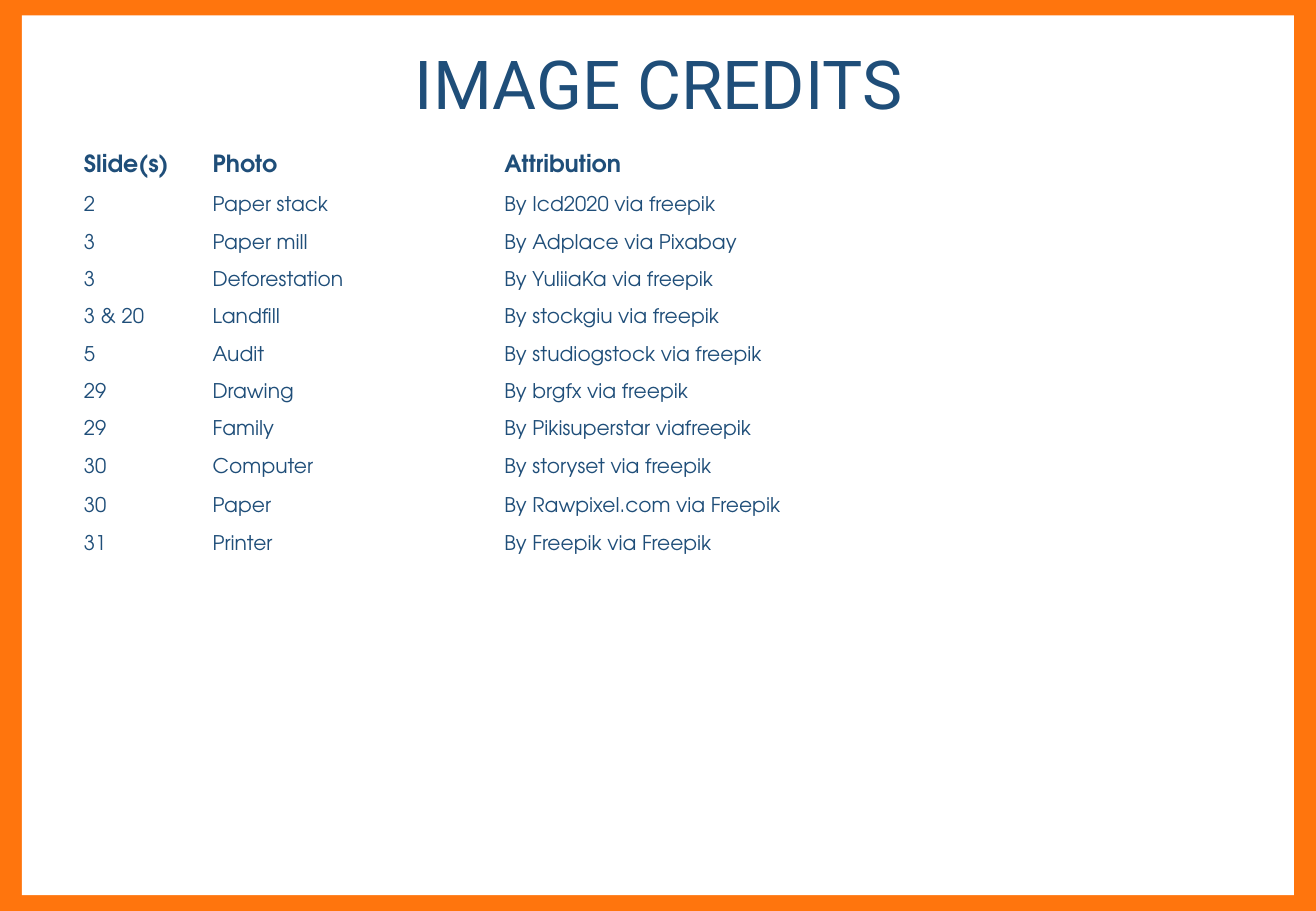
import pptx
import pptx.util
import pptx.dml.color
import pptx.enum.shapes
import pptx.enum.text

Cm = pptx.util.Cm
COLORS = {"border": "FF750D", "page": "FFFFFF", "ink": "1F4E79"}


def write(frame, text, font="TeX Gyre Adventor", size=12, bold=False, align=pptx.enum.text.PP_ALIGN.LEFT):
    paragraph = frame.paragraphs[0]
    paragraph.alignment = align
    run = paragraph.add_run()
    run.text = text
    run.font.name = font
    run.font.size = pptx.util.Pt(size)
    run.font.bold = bold
    run.font.color.rgb = pptx.dml.color.RGBColor.from_string(COLORS["ink"])


deck = pptx.Presentation()
deck.slide_width, deck.slide_height = Cm(27.51), Cm(19.05)
slide = deck.slides.add_slide(deck.slide_layouts[5])
slide.background.fill.solid()
slide.background.fill.fore_color.rgb = pptx.dml.color.RGBColor.from_string(COLORS["border"])

page = slide.shapes.add_shape(
    pptx.enum.shapes.MSO_SHAPE.RECTANGLE, Cm(0.46), Cm(0.32), Cm(26.59), Cm(18.4))
page.shadow.inherit = False
page.fill.solid()
page.fill.fore_color.rgb = pptx.dml.color.RGBColor.from_string(COLORS["page"])
page.line.fill.background()

heading = slide.shapes.title
page._element.addnext(heading._element)
heading.left, heading.top, heading.width, heading.height = Cm(3.99), Cm(0.76), Cm(19.56), Cm(1.96)
heading.text_frame.word_wrap = True
heading.text_frame.auto_size = pptx.enum.text.MSO_AUTO_SIZE.NONE
heading.text_frame.vertical_anchor = pptx.enum.text.MSO_ANCHOR.TOP
write(heading.text_frame, "IMAGE CREDITS", font="Roboto", size=40, align=pptx.enum.text.PP_ALIGN.CENTER)

credit_rows = [
    ("Slide(s)", "Photo", "Attribution"),
    ("2", "Paper stack", "By Icd2020 via freepik"),
    ("3", "Paper mill", "By Adplace via Pixabay"),
    ("3", "Deforestation", "By YuliiaKa via freepik"),
    ("3 & 20", "Landfill", "By stockgiu via freepik"),
    ("5", "Audit", "By studiogstock via freepik"),
    ("29", "Drawing", "By brgfx via freepik"),
    ("29", "Family", "By Pikisuperstar viafreepik"),
    ("30", "Computer", "By storyset via freepik"),
    ("30", "Paper", "By Rawpixel.com via Freepik"),
    ("31", "Printer", "By Freepik via Freepik"),
] + [("", "", "")] * 7
column_widths = [2.69, 6.1, 14.63]
row_heights = [0.87] + [0.78] * 6 + [0.8] * 3 + [0.86] + [0.81] * 7

credits = slide.shapes.add_table(
    len(credit_rows), len(column_widths), Cm(1.5), Cm(3.12),
    Cm(sum(column_widths)), Cm(sum(row_heights))).table
credits.first_row = False
credits.horz_banding = False
for column, width in zip(credits.columns, column_widths):
    column.width = Cm(width)
for row_index, (row, height, entries) in enumerate(zip(credits.rows, row_heights, credit_rows)):
    row.height = Cm(height)
    is_header = row_index == 0
    for cell, entry in zip(row.cells, entries):
        cell.fill.background()
        write(cell.text_frame, entry, size=14 if is_header else 12, bold=is_header)

deck.save("out.pptx")
